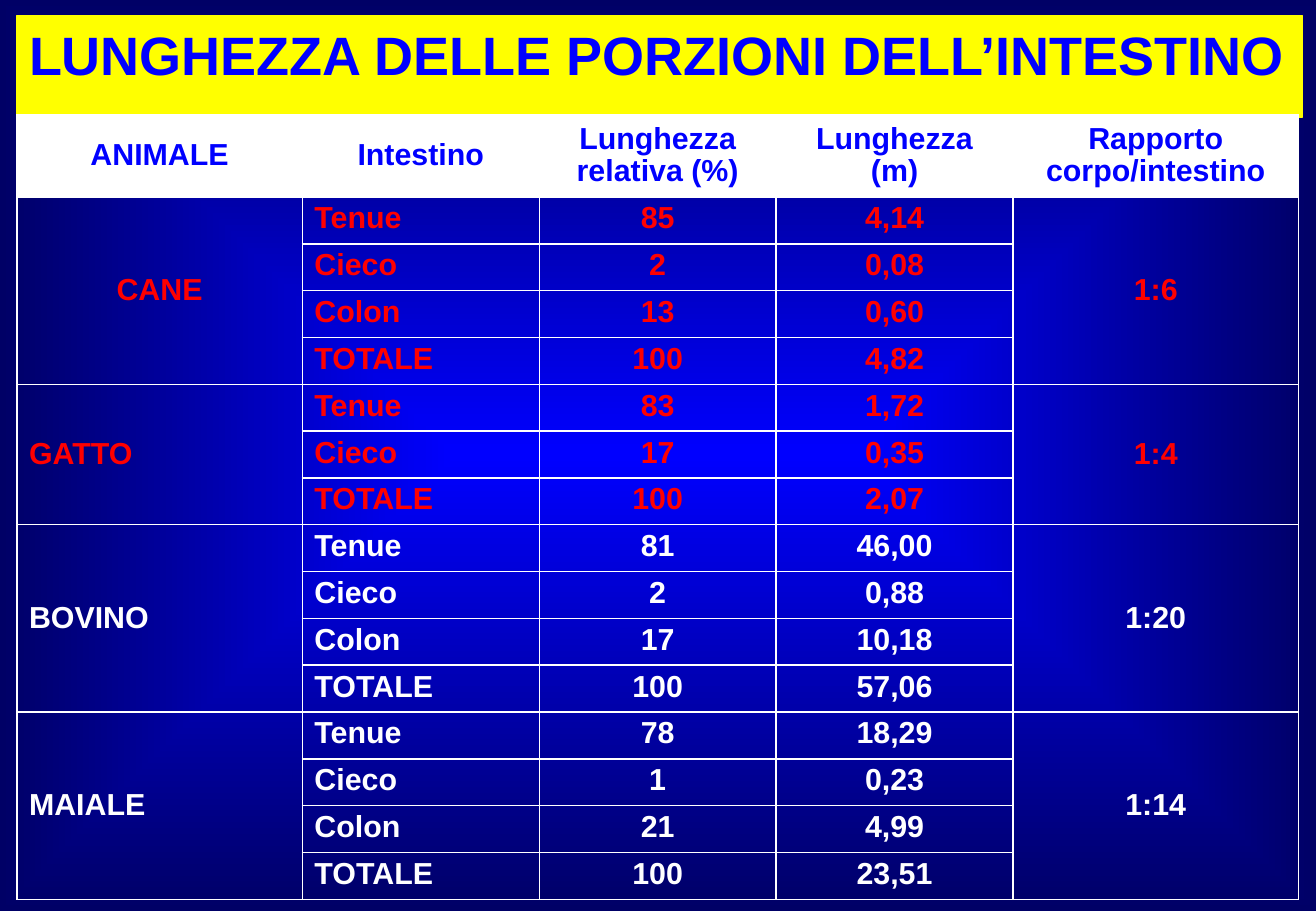
from lxml.etree import SubElement
from pptx import Presentation
from pptx.dml.color import RGBColor
from pptx.enum.text import MSO_ANCHOR, MSO_AUTO_SIZE, PP_ALIGN
from pptx.oxml.ns import qn
from pptx.util import Pt

BLUE = RGBColor(0x00, 0x00, 0xFF)
NAVY = RGBColor(0x00, 0x00, 0x66)
YELLOW = RGBColor(0xFF, 0xFF, 0x00)
RED = RGBColor(0xFF, 0x00, 0x00)
WHITE = RGBColor(0xFF, 0xFF, 0xFF)

HEADERS = ["ANIMALE", "Intestino", "Lunghezza relativa (%)", "Lunghezza\n(m)",
           "Rapporto corpo/intestino"]
ANIMALS = [
    ("CANE", "1:6", RED, PP_ALIGN.CENTER,
     [("Tenue", "85", "4,14"), ("Cieco", "2", "0,08"),
      ("Colon", "13", "0,60"), ("TOTALE", "100", "4,82")]),
    ("GATTO", "1:4", RED, PP_ALIGN.LEFT,
     [("Tenue", "83", "1,72"), ("Cieco", "17", "0,35"), ("TOTALE", "100", "2,07")]),
    ("BOVINO", "1:20", WHITE, PP_ALIGN.LEFT,
     [("Tenue", "81", "46,00"), ("Cieco", "2", "0,88"),
      ("Colon", "17", "10,18"), ("TOTALE", "100", "57,06")]),
    ("MAIALE", "1:14", WHITE, PP_ALIGN.LEFT,
     [("Tenue", "78", "18,29"), ("Cieco", "1", "0,23"),
      ("Colon", "21", "4,99"), ("TOTALE", "100", "23,51")]),
]
COL_WIDTHS = [169.2, 140.4, 140.4, 140.4, 169.2]
HEADER_HEIGHT, ROW_HEIGHT = 48.6, 27.7


def style_run(r, size, color):
    r.font.name = "Arial"
    r.font.size = Pt(size)
    r.font.bold = True
    r.font.color.rgb = color


def write_cell(cell, text, color, align=PP_ALIGN.CENTER, anchor=MSO_ANCHOR.MIDDLE):
    cell.text_frame.text = text
    cell.vertical_anchor = anchor
    for p in cell.text_frame.paragraphs:
        p.alignment = align
        p.line_spacing = 0.95
        for r in p.runs:
            style_run(r, 18, color)


prs = Presentation()
prs.slide_width, prs.slide_height = Pt(780), Pt(540)
s = prs.slides.add_slide(prs.slide_layouts[5])

# Background: glow from the centre
fill = s.background.fill
fill.gradient()
for stop, color in zip(fill.gradient_stops, (BLUE, NAVY)):
    stop.color.rgb = color
grad = s.element.find(".//" + qn("a:gradFill"))
grad.remove(grad.find(qn("a:lin")))
glow = SubElement(grad, qn("a:path"), {"path": "shape"})
SubElement(glow, qn("a:fillToRect"), {side: "50000" for side in "ltrb"})

# Title
title = s.shapes.title
title.left, title.top, title.width, title.height = Pt(10), Pt(9.4), Pt(761.8), Pt(46)
title.fill.solid()
title.fill.fore_color.rgb = YELLOW
title.line.color.rgb = YELLOW
title.line.width = Pt(0.75)
tf = title.text_frame
tf.text = "LUNGHEZZA DELLE PORZIONI DELL’INTESTINO"
tf.word_wrap = False
tf.auto_size = MSO_AUTO_SIZE.SHAPE_TO_FIT_TEXT
tf.vertical_anchor = MSO_ANCHOR.TOP
tf.paragraphs[0].alignment = PP_ALIGN.LEFT
style_run(tf.paragraphs[0].runs[0], 32, BLUE)

# Table grid
n_rows = 1 + sum(len(parts) for *_, parts in ANIMALS)
table = s.shapes.add_table(
    n_rows, len(HEADERS), Pt(10), Pt(68.2), Pt(sum(COL_WIDTHS)),
    Pt(HEADER_HEIGHT + (n_rows - 1) * ROW_HEIGHT)).table
table.first_row = table.horz_banding = False
for col, width in zip(table.columns, COL_WIDTHS):
    col.width = Pt(width)
for i, row in enumerate(table.rows):
    row.height = Pt(ROW_HEIGHT if i else HEADER_HEIGHT)
    for cell in row.cells:
        tcPr = cell._tc.get_or_add_tcPr()
        for side in "LRTB":
            ln = SubElement(tcPr, qn("a:ln" + side), {"w": str(Pt(1))})
            solid = SubElement(ln, qn("a:solidFill"))
            SubElement(solid, qn("a:srgbClr"), {"val": str(WHITE)})
        if i:
            cell.fill.background()
        else:
            cell.fill.solid()
            cell.fill.fore_color.rgb = WHITE

# Table contents
for c, header in enumerate(HEADERS):
    write_cell(table.cell(0, c), header, BLUE)
first = 1
for animal, ratio, color, align, parts in ANIMALS:
    last = first + len(parts) - 1
    for c in (0, 4):
        table.cell(first, c).merge(table.cell(last, c))
    write_cell(table.cell(first, 0), animal, color, align)
    ratio_cell = table.cell(first, 4)
    write_cell(ratio_cell, ratio, color)
    ratio_cell.margin_left = ratio_cell.margin_right = Pt(0)
    ratio_cell.margin_top = ratio_cell.margin_bottom = Pt(0)
    for i, values in enumerate(parts, first):
        for c, value in enumerate(values, 1):
            write_cell(table.cell(i, c), value, color,
                       PP_ALIGN.LEFT if c == 1 else PP_ALIGN.CENTER, MSO_ANCHOR.TOP)
    first = last + 1

prs.save("out.pptx")
